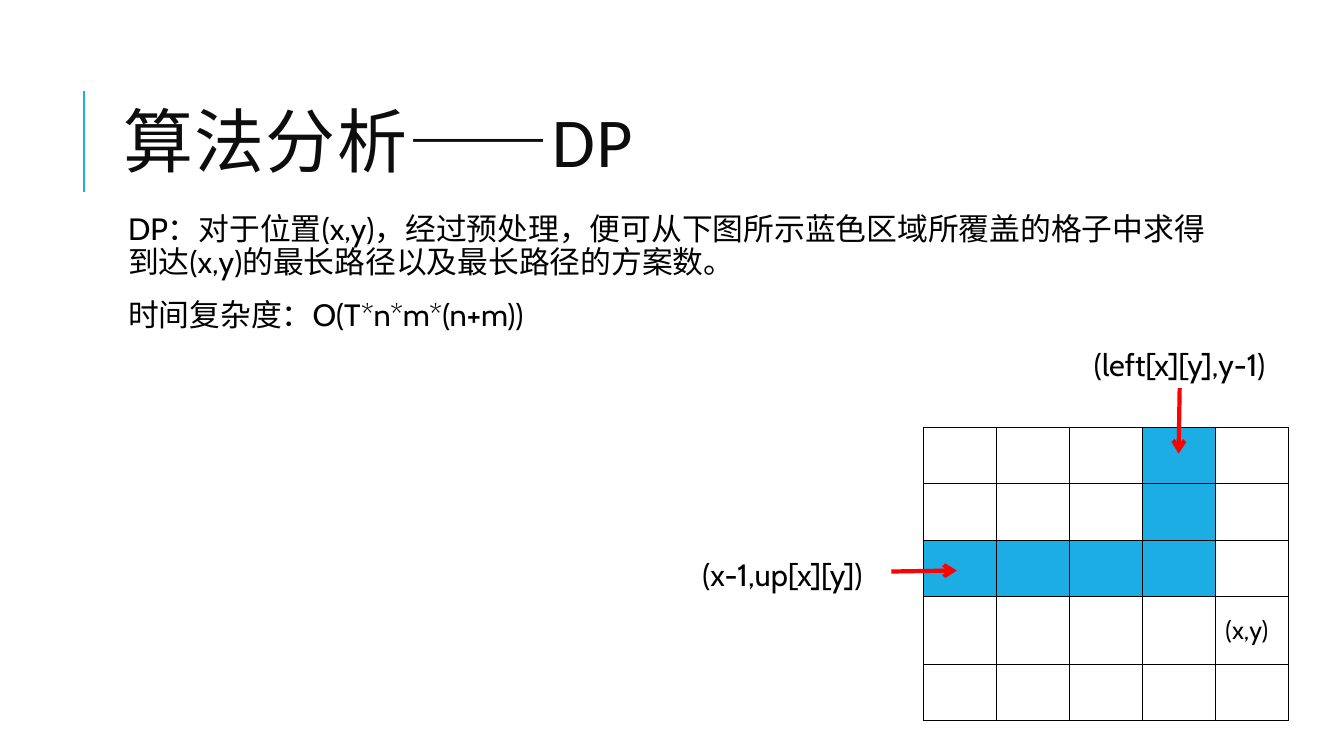
"""Build the slide on the DP analysis of longest paths in a grid."""
import dataclasses

import lxml.etree
import pptx
import pptx.dml.color
import pptx.enum.shapes
import pptx.enum.text
import pptx.oxml.ns
import pptx.util

Inches = pptx.util.Inches
Pt = pptx.util.Pt
Align = pptx.enum.text.PP_ALIGN
Anchor = pptx.enum.text.MSO_ANCHOR
Fit = pptx.enum.text.MSO_AUTO_SIZE


@dataclasses.dataclass(frozen=True)
class Theme:
    blue: str = "1CADE4"
    black: str = "000000"
    ink: str = "0D0D0D"
    red: str = "FF0000"
    white: str = "FFFFFF"
    head: str = "Calibri"
    text: str = "Cabin"
    big: int = 50
    mid: int = 22
    small: int = 18


def color(code):
    return pptx.dml.color.RGBColor.from_string(code)


def child(parent, tag, **attrs):
    node = lxml.etree.SubElement(parent, pptx.oxml.ns.qn(tag))
    for key, value in attrs.items():
        node.set(key, str(value))
    return node


class Deck:
    def __init__(self, theme):
        self.theme = theme
        self.file = pptx.Presentation()
        self.file.slide_width = Inches(13.33)
        self.file.slide_height = Inches(7.5)
        self.slide = self.file.slides.add_slide(self.file.slide_layouts[1])

    def place(self, shape, box):
        shape.left, shape.top, shape.width, shape.height = map(Inches, box)

    def style(self, para, size, face, code):
        for run in para.runs:
            run.font.size = Pt(size)
            run.font.name = face
            run.font.color.rgb = color(code)

    def title(self, text, box):
        shape = self.slide.shapes.title
        self.place(shape, box)
        frame = shape.text_frame
        frame.text = text
        frame.auto_size = Fit.NONE
        frame.vertical_anchor = Anchor.MIDDLE
        para = frame.paragraphs[0]
        para.alignment = Align.LEFT
        para.line_spacing = 0.8
        self.style(para, self.theme.big, self.theme.head, self.theme.ink)
        for run in para.runs:
            run.font._element.set("spc", "100")

    def body(self, lines, box):
        shape = self.slide.placeholders[1]
        self.place(shape, box)
        frame = shape.text_frame
        frame.text = "\n".join(lines)
        frame.auto_size = Fit.NONE
        frame.margin_left = frame.margin_right = Inches(0.05)
        frame.margin_top = frame.margin_bottom = Inches(0.05)
        for para in frame.paragraphs:
            para.line_spacing = 0.9
            para.space_before = Pt(12)
            para.space_after = Pt(2)
            self.style(para, self.theme.mid, self.theme.text, self.theme.black)
            props = para._p.get_or_add_pPr()
            props.set("marL", str(Inches(0.1)))
            props.set("indent", str(-Inches(0.1)))
            tint = child(props, "a:buClr")
            child(tint, "a:srgbClr", val=self.theme.blue)
            child(props, "a:buChar", char=" ")

    def label(self, text, box):
        frame = self.slide.shapes.add_textbox(*map(Inches, box)).text_frame
        frame.word_wrap = True
        frame.auto_size = Fit.SHAPE_TO_FIT_TEXT
        frame.text = text
        para = frame.paragraphs[0]
        para.alignment = Align.CENTER
        self.style(para, self.theme.mid, self.theme.text, self.theme.black)

    def line(self, start, end, code, width, arrow=False):
        kind = pptx.enum.shapes.MSO_CONNECTOR.STRAIGHT
        line = self.slide.shapes.add_connector(kind, *map(Inches, start + end))
        line.line.color.rgb = color(code)
        line.line.width = Pt(width)
        if arrow:
            child(line.line._get_or_add_ln(), "a:tailEnd", type="arrow")
        child(line._element.spPr, "a:effectLst")

    def border(self, cell):
        props = cell._tc.get_or_add_tcPr()
        for tag in ("a:lnL", "a:lnR", "a:lnT", "a:lnB"):
            edge = child(props, tag, w=Pt(1))
            fill = child(edge, "a:solidFill")
            child(fill, "a:srgbClr", val=self.theme.black)

    def grid(self, box, rows, cols, blue, words):
        shape = self.slide.shapes.add_table(
            len(rows), len(cols), *map(Inches, box))
        table = shape.table
        table.first_row = table.horz_banding = False
        for row, height in zip(table.rows, rows):
            row.height = Inches(height)
        for col, width in zip(table.columns, cols):
            col.width = Inches(width)
        for r in range(len(rows)):
            for c in range(len(cols)):
                cell = table.cell(r, c)
                self.border(cell)
                cell.fill.solid()
                code = self.theme.blue if (r, c) in blue else self.theme.white
                cell.fill.fore_color.rgb = color(code)
                if (r, c) in words:
                    cell.text_frame.text = words[r, c]
                    cell.vertical_anchor = Anchor.MIDDLE
                    self.style(cell.text_frame.paragraphs[0], self.theme.small,
                               self.theme.text, self.theme.black)


def main():
    theme = Theme()
    deck = Deck(theme)
    deck.line((0.83, 1.9), (0.83, 0.9), theme.blue, 1.5)
    deck.title("算法分析——DP", (1.12, 0.64, 10.63, 1.64))
    deck.body([
        "DP：对于位置(x,y)，经过预处理，便可从下图所示蓝色区域所覆盖的格子中"
        "求得到达(x,y)的最长路径以及最长路径的方案数。",
        "时间复杂度：O(T*n*m*(n+m))",
    ], (1.12, 2.07, 11.17, 3.95))
    blue = {(r, 3) for r in range(3)} | {(2, c) for c in range(4)}
    deck.grid((9.16, 4.24, 3.62, 2.9), [0.56, 0.56, 0.56, 0.67, 0.56],
              [0.724] * 5, blue, {(3, 4): "(x,y)"})
    deck.label("(left[x][y],y-1)", (10.62, 3.38, 2.16, 0.47))
    deck.line((11.7, 3.85), (11.69, 4.5), theme.red, 3, arrow=True)
    deck.label("(x-1,up[x][y])", (6.68, 5.46, 2.16, 0.47))
    deck.line((8.84, 5.67), (9.49, 5.66), theme.red, 3, arrow=True)
    deck.file.save("out.pptx")


if __name__ == "__main__":
    main()
